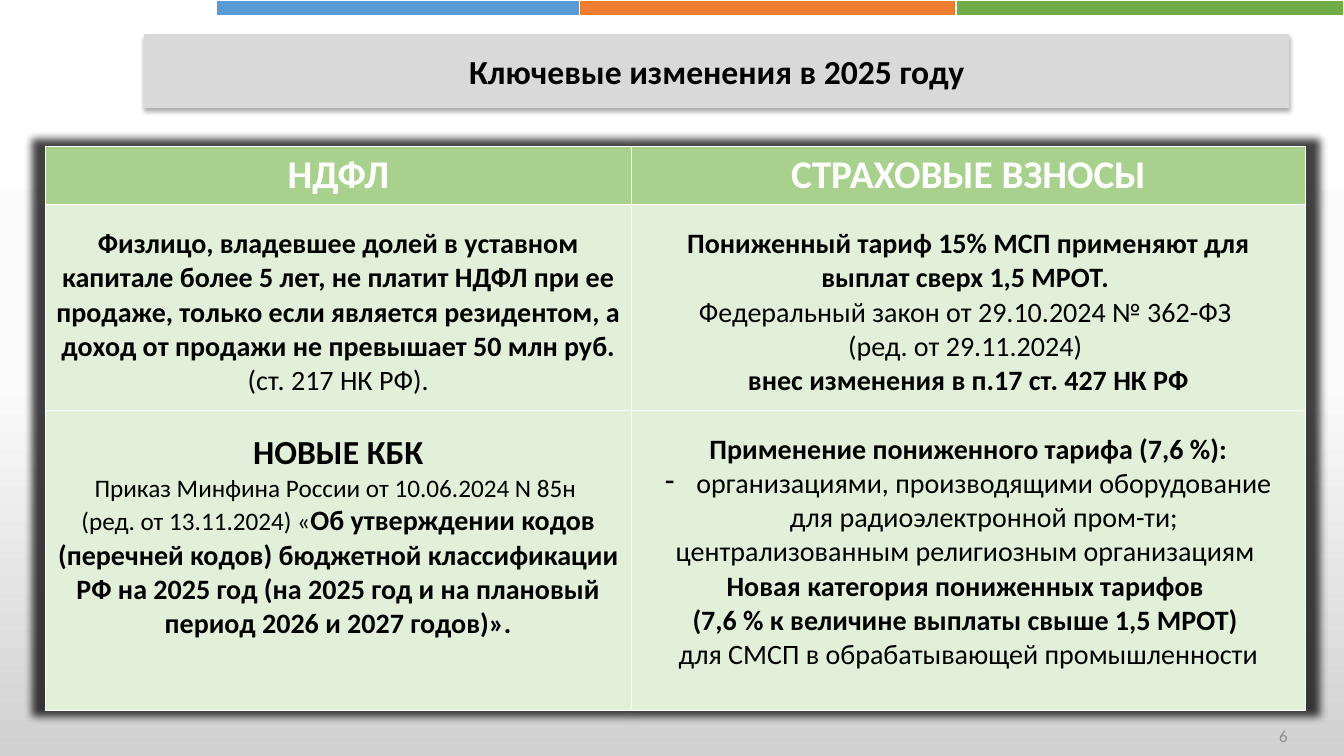
from copy import deepcopy
from dataclasses import dataclass

from lxml import etree
from pptx import Presentation
from pptx import util as u
from pptx.dml.color import RGBColor
from pptx.enum import shapes, text
from pptx.oxml import ns


@dataclass(frozen=True)
class Theme:
    """Colours, type sizes and font of the slide."""
    font: str = "Calibri"
    black: str = "000000"
    white: str = "FFFFFF"
    gray: str = "D9D9D9"
    faint: str = "8C8C8C"
    head: str = "A9D18E"
    cell: str = "E2F0D9"
    bars: tuple = ("5B9BD5", "ED7D31", "70AD47")
    sky: tuple = ((0, "FFFFFF"), (0.5, "FBFBFB"), (1, "D1D1D1"))
    tiny: int = 12
    small: int = 18
    body: int = 20
    title: int = 24
    large: int = 28


T = Theme()
MID = text.PP_ALIGN.CENTER

TAX = [
    [("Физлицо, владевшее долей в уставном капитале более 5 лет, не платит НДФЛ "
      "при ее продаже, только если является резидентом, а доход от продажи "
      "не превышает 50 млн руб. ", T.body, True),
     ("(ст. 217 НК РФ).", T.body, False)],
]
RATE = [
    [("Пониженный тариф 15% МСП применяют для выплат сверх 1,5 МРОТ. ", T.body, True)],
    [("Федеральный закон от 29.10.2024 № 362-ФЗ \n(ред. от 29.11.2024) \n", T.body, False),
     ("внес изменения в п.17 ст. 427 НК РФ", T.body, True)],
]
CODES = [
    [("НОВЫЕ КБК", T.title, True)],
    [("Приказ Минфина России от 10.06.2024 N 85н \n(ред. от 13.11.2024) «", T.small, False),
     ("Об утверждении кодов (перечней кодов) бюджетной классификации РФ на 2025 год "
      "(на 2025 год и на плановый период 2026 и 2027 годов)».", T.body, True)],
]
GROUPS = [
    [("Применение пониженного тарифа (7,6 %):", T.body, True)],
    [("организациями, производящими оборудование для радиоэлектронной пром-ти;",
      T.body, False)],
    [("централизованным религиозным организациям \n", T.body, False),
     ("Новая категория пониженных тарифов ", T.body, True)],
    [("(7,6 % к величине выплаты свыше 1,5 МРОТ) \n", T.body, True),
     ("для СМСП в обрабатывающей промышленности", T.body, False)],
]


def rgb(code):
    """Turn a hex code into a colour."""
    return RGBColor.from_string(code)


def style(font, size, color, bold=False):
    """Format a font."""
    font.name, font.size, font.bold = T.font, u.Pt(size), bold
    font.color.rgb = rgb(color)


def label(frame, words, size, color, bold=False, align=MID):
    """Write one line of text, centred in height."""
    frame.word_wrap = True
    frame.vertical_anchor = text.MSO_ANCHOR.MIDDLE
    frame.text = words
    line = frame.paragraphs[0]
    line.alignment = align
    style(line.runs[0].font, size, color, bold)


def shade(parent, blur, dist, alpha, **extra):
    """Give an element an outer shadow."""
    for old in parent.findall(ns.qn("a:effectLst")):
        parent.remove(old)
    effect = etree.SubElement(parent, ns.qn("a:effectLst"))
    outer = etree.SubElement(effect, ns.qn("a:outerShdw"), blurRad=str(u.Pt(blur)),
                             dist=str(u.Pt(dist)), dir="5400000", **extra)
    color = etree.SubElement(outer, ns.qn("a:srgbClr"), val=T.black)
    etree.SubElement(color, ns.qn("a:alpha"), val=str(alpha * 1000))


def paint(slide):
    """Fill the background with a vertical gradient."""
    fill = slide.background.fill
    fill.gradient()
    fill.gradient_angle = 270
    first = slide.background._cSld.find(".//" + ns.qn("a:gs"))
    first.addnext(deepcopy(first))
    for stop, (place, color) in zip(fill.gradient_stops, T.sky):
        stop.position = place
        stop.color.rgb = rgb(color)


def block(slide, left, top, width, height, fill, line=None):
    """Draw a flat rectangle."""
    box = slide.shapes.add_shape(shapes.MSO_SHAPE.RECTANGLE, *map(u.Inches, (left, top, width, height)))
    box.shadow.inherit = False
    box.fill.solid()
    box.fill.fore_color.rgb = rgb(fill)
    if line:
        box.line.color.rgb = rgb(line)
        box.line.width = u.Pt(1)
    else:
        box.line.fill.background()
    return box


def dash(para):
    """Put a hanging dash before a paragraph."""
    props = para._p.get_or_add_pPr()
    props.set("marL", str(u.Inches(0.31)))
    props.set("indent", str(u.Inches(-0.31)))
    etree.SubElement(props, ns.qn("a:buChar"), char="-")


def write(frame, paras):
    """Write centred paragraphs of mixed runs."""
    for i, parts in enumerate(paras):
        para = frame.add_paragraph() if i else frame.paragraphs[0]
        para.alignment = MID
        if parts[0][0].startswith("организациями"):
            dash(para)
        for words, size, bold in parts:
            for j, piece in enumerate(words.split("\n")):
                if j:
                    para.add_line_break()
                if piece:
                    run = para.add_run()
                    run.text = piece
                    style(run.font, size, T.black, bold)


def grid(slide, heads, rows, widths, heights):
    """Build the table with its heading row."""
    frame = slide.shapes.add_table(
        len(heights), len(widths), u.Inches(0.45), u.Inches(1.45),
        u.Inches(sum(widths)), u.Inches(sum(heights)))
    table = frame.table
    shade(table._tbl.tblPr, 6, 0, 75, sx="102000", sy="102000", algn="ctr")
    props = table._tbl.tblPr
    props.insert(0, props.find(ns.qn("a:effectLst")))
    for col, width in zip(table.columns, widths):
        col.width = u.Inches(width)
    for row, height in zip(table.rows, heights):
        row.height = u.Inches(height)
    for r, line in enumerate([heads] + rows):
        for c, words in enumerate(line):
            cell = table.cell(r, c)
            cell.fill.solid()
            cell.fill.fore_color.rgb = rgb(T.cell if r else T.head)
            if r:
                cell.margin_top = u.Inches(0.22)
                write(cell.text_frame, words)
            else:
                label(cell.text_frame, words, T.large, T.white, True)
                cell.vertical_anchor = text.MSO_ANCHOR.MIDDLE


def main():
    """Build and save the slide."""
    deck = Presentation()
    deck.slide_width, deck.slide_height = u.Inches(13.33), u.Inches(7.5)
    slide = deck.slides.add_slide(deck.slide_layouts[6])
    paint(slide)
    edges = (2.15, 5.75, 9.48, 13.33)
    for left, right, color in zip(edges, edges[1:], T.bars):
        block(slide, left, 0, right - left, 0.16, color, T.white)
    page = slide.shapes.add_textbox(*map(u.Inches, (9.87, 7.1, 3, 0.4)))
    label(page.text_frame, "6", T.tiny, T.faint, align=text.PP_ALIGN.RIGHT)
    title = block(slide, 1.43, 0.34, 11.36, 0.73, T.gray)
    shade(title._element.spPr, 3.5, 2.2, 32)
    label(title.text_frame, "Ключевые изменения в 2025 году", T.title, T.black, True)
    grid(slide, ["НДФЛ", "СТРАХОВЫЕ ВЗНОСЫ"], [[TAX, RATE], [CODES, GROUPS]],
         (5.81, 6.69), (0.58, 2.04, 2.98))
    deck.save("out.pptx")


if __name__ == "__main__":
    main()
